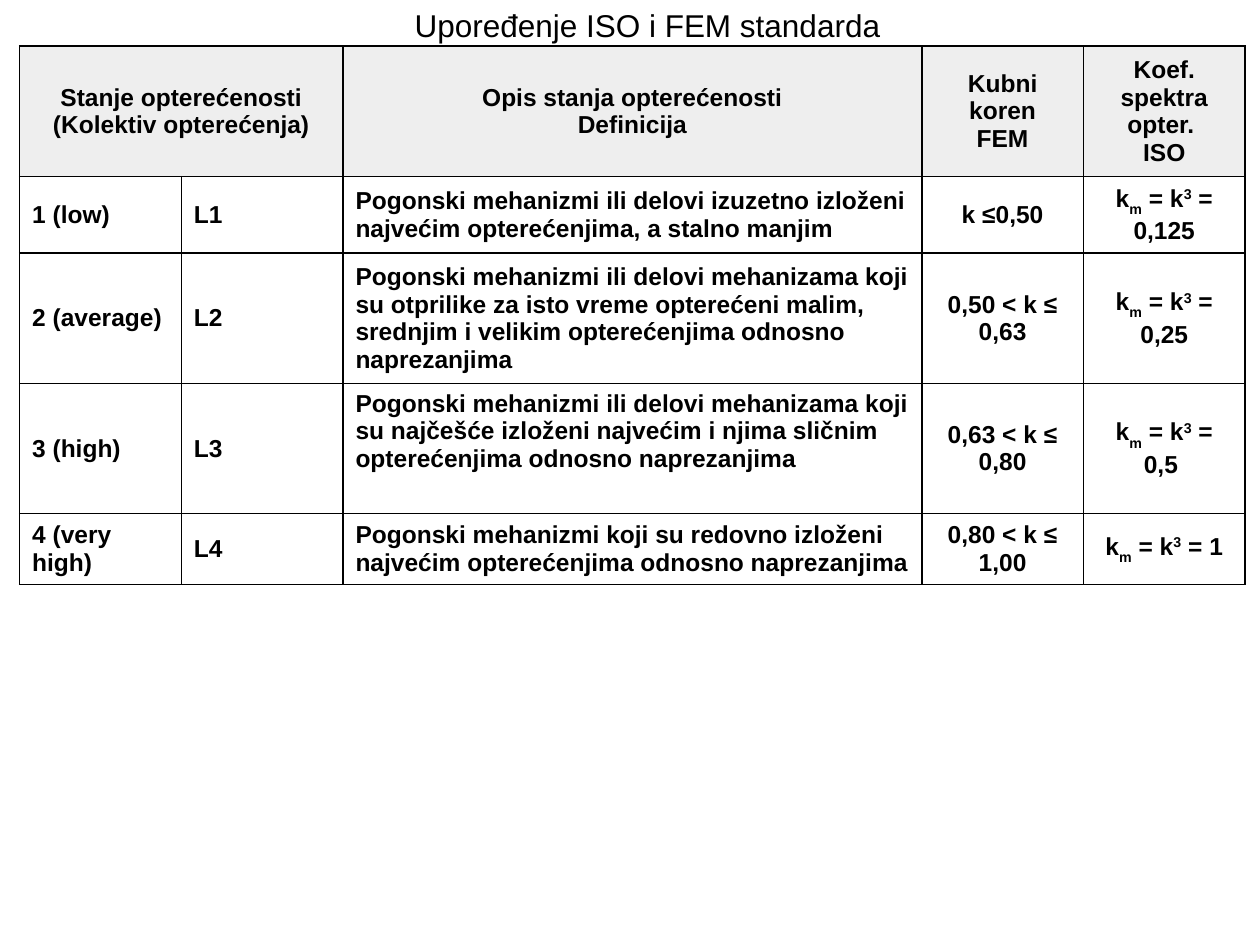
from lxml import etree
from pptx import Presentation
from pptx.dml.color import RGBColor
from pptx.enum.text import MSO_ANCHOR, MSO_AUTO_SIZE, PP_ALIGN
from pptx.oxml.ns import qn
from pptx.util import Pt

LEFT, CENTER = PP_ALIGN.LEFT, PP_ALIGN.CENTER
TOP, MIDDLE = MSO_ANCHOR.TOP, MSO_ANCHOR.MIDDLE
NO_AUTOFIT = MSO_AUTO_SIZE.NONE
BLACK = RGBColor(0x00, 0x00, 0x00)
HEADER_GRAY = RGBColor(0xEE, 0xEE, 0xEE)
FONT = "Arial"
TITLE_ONLY = 5

COL_WIDTHS = [92.4, 92.4, 330.8, 92.4, 92.4]
ROW_HEIGHTS = [74.8, 43.6, 74.6, 74.4, 40.6]
HEADERS = [
    ["Stanje opterećenosti", "(Kolektiv opterećenja)"],
    [],
    ["Opis stanja opterećenosti", "Definicija"],
    ["Kubni koren", "FEM"],
    ["Koef. spektra opter. ", "ISO"],
]
LOAD_STATES = [
    ("1 (low)", "L1",
     "Pogonski mehanizmi ili delovi izuzetno izloženi najvećim "
     "opterećenjima, a stalno manjim", "k ≤0,50", "0,125"),
    ("2 (average)", "L2",
     "Pogonski mehanizmi ili delovi mehanizama koji su otprilike za isto "
     "vreme opterećeni malim, srednjim i velikim opterećenjima odnosno "
     "naprezanjima", "0,50 < k ≤ 0,63", "0,25"),
    ("3 (high)", "L3",
     "Pogonski mehanizmi ili delovi mehanizama koji su najčešće izloženi "
     "najvećim i njima sličnim opterećenjima odnosno naprezanjima",
     "0,63 < k ≤ 0,80", "0,5 "),
    ("4 (very high)", "L4",
     "Pogonski mehanizmi koji su redovno izloženi najvećim opterećenjima "
     "odnosno naprezanjima", "0,80 < k ≤ 1,00", "1"),
]


def set_font(p, size, bold):
    """Apply the slide's font to a whole paragraph."""
    p.font.name = FONT
    p.font.size = Pt(size)
    p.font.bold = bold
    p.font.color.rgb = BLACK


def add_title(s, left, top, width, height):
    """Place the slide title in the given box."""
    sp = s.shapes.title
    sp.left, sp.top, sp.width, sp.height = map(Pt, (left, top, width, height))
    tf = sp.text_frame
    tf.text = "Upoređenje ISO i FEM standarda"
    tf.word_wrap = False
    tf.auto_size = NO_AUTOFIT
    tf.vertical_anchor = TOP
    p = tf.paragraphs[0]
    p.alignment = LEFT
    p.line_spacing = 1.0
    set_font(p, 18, False)


def style_cell(cell, fill=None):
    """Give a cell black borders, middle anchoring and an optional fill."""
    tcPr = cell._tc.get_or_add_tcPr()
    for side in ("lnL", "lnR", "lnT", "lnB"):
        ln = etree.SubElement(tcPr, qn(f"a:{side}"), w=str(Pt(1)))
        solid = etree.SubElement(ln, qn("a:solidFill"))
        etree.SubElement(solid, qn("a:srgbClr"), val=str(BLACK))
    if fill is None:
        cell.fill.background()
    else:
        cell.fill.solid()
        cell.fill.fore_color.rgb = fill
    cell.vertical_anchor = MIDDLE


def write_cell(cell, lines, align):
    """Write one bold paragraph per line."""
    cell.text_frame.text = "\n".join(lines)
    for p in cell.text_frame.paragraphs:
        p.alignment = align
        set_font(p, 14, True)


def write_coefficient(cell, value):
    """Write the formula for the load spectrum coefficient."""
    p = cell.text_frame.paragraphs[0]
    p.alignment = CENTER
    set_font(p, 14, True)
    parts = [("k", 0), ("m", -30), (" = k", 0), ("3", 30), (f" = {value}", 0)]
    for text, baseline in parts:
        r = p.add_run()
        r.text = text
        if baseline:
            r._r.get_or_add_rPr().set("baseline", str(baseline * 1000))


def add_load_table(s, left, top, width, height):
    """Place the table of load states in the given box."""
    table = s.shapes.add_table(
        len(ROW_HEIGHTS), len(COL_WIDTHS),
        Pt(left), Pt(top), Pt(width), Pt(height)).table
    table.first_row = table.horz_banding = False
    for col, share in zip(table.columns, COL_WIDTHS):
        col.width = Pt(width * share / sum(COL_WIDTHS))
    for row, share in zip(table.rows, ROW_HEIGHTS):
        row.height = Pt(height * share / sum(ROW_HEIGHTS))

    table.cell(0, 0).merge(table.cell(0, 1))
    for c, lines in enumerate(HEADERS):
        cell = table.cell(0, c)
        style_cell(cell, HEADER_GRAY)
        if lines:
            write_cell(cell, lines, CENTER)

    for r, (*texts, value) in enumerate(LOAD_STATES, start=1):
        for c, text in enumerate(texts):
            cell = table.cell(r, c)
            style_cell(cell)
            write_cell(cell, [text], CENTER if c == 3 else LEFT)
        cell = table.cell(r, len(texts))
        style_cell(cell)
        write_coefficient(cell, value)
    table.cell(3, 2).vertical_anchor = TOP


def main():
    """Build the slide and save it."""
    prs = Presentation()
    prs.slide_width, prs.slide_height = Pt(720), Pt(540)
    s = prs.slides.add_slide(prs.slide_layouts[TITLE_ONLY])
    add_load_table(s, 11.2, 26.2, sum(COL_WIDTHS), sum(ROW_HEIGHTS))
    add_title(s, 229.7, 0, 280.8, 28.8)
    prs.save("out.pptx")


if __name__ == "__main__":
    main()
